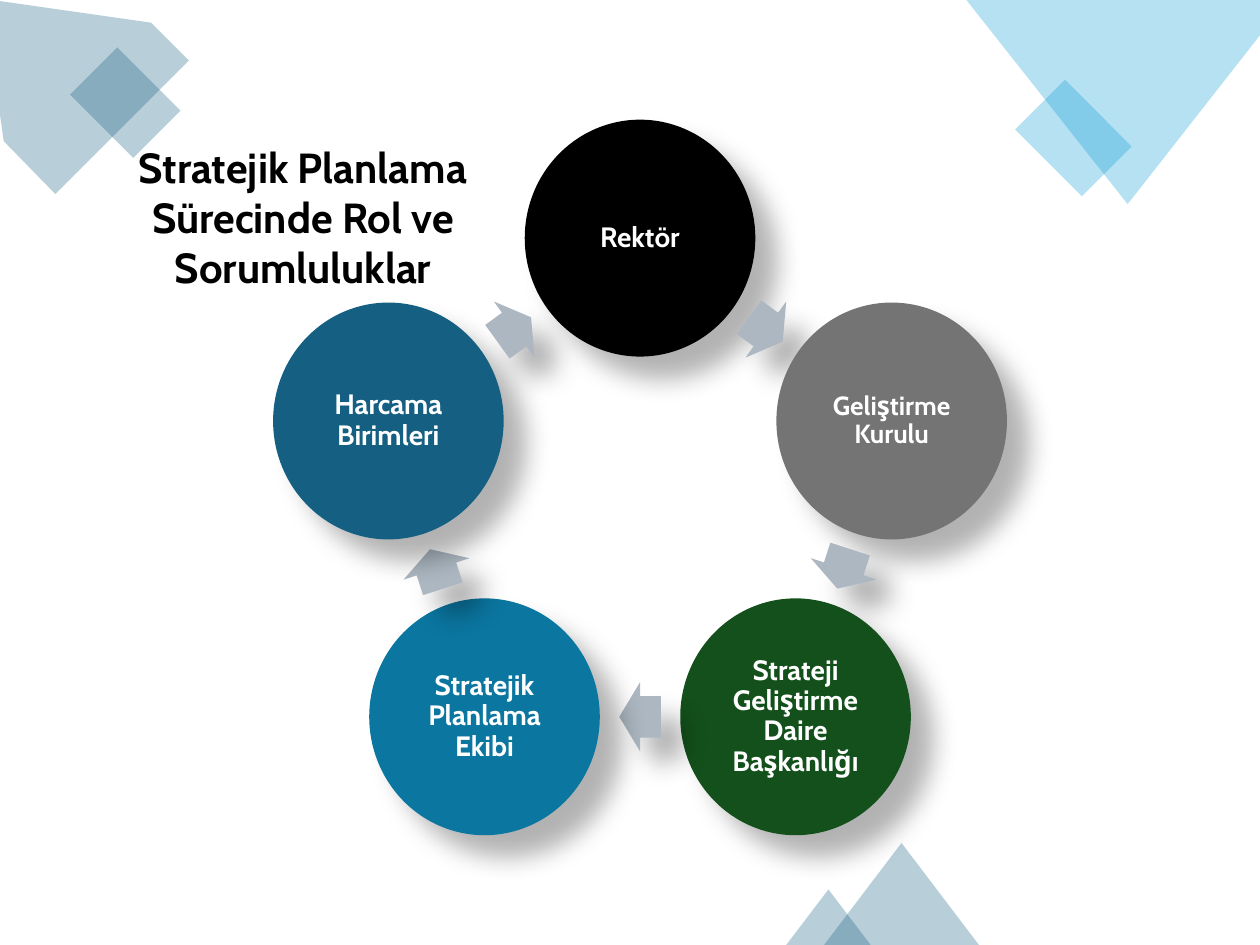
from math import cos, pi, radians, sin

from lxml.etree import SubElement
from pptx import Presentation
from pptx.dml.color import RGBColor
from pptx.enum.shapes import MSO_SHAPE
from pptx.enum.text import MSO_ANCHOR, MSO_AUTO_SIZE, PP_ALIGN
from pptx.oxml.ns import qn
from pptx.util import Inches, Pt

BLACK = RGBColor(0x00, 0x00, 0x00)
WHITE = RGBColor(0xFF, 0xFF, 0xFF)
GRAY = RGBColor(0x74, 0x74, 0x74)
GREEN = RGBColor(0x13, 0x50, 0x1B)
BLUE = RGBColor(0x0B, 0x76, 0xA0)
TEAL = RGBColor(0x15, 0x60, 0x82)
SKY = RGBColor(0x0F, 0x9E, 0xD5)
ARROW_GRAY = RGBColor(0xAC, 0xB7, 0xC1)

FONT = "Cabin"
TITLE = "Stratejik Planlama Sürecinde Rol ve Sorumluluklar"
ROLES = [
    ("Rektör", BLACK, 16),
    ("Geliştirme Kurulu", GRAY, 15),
    ("Strateji Geliştirme Daire Başkanlığı", GREEN, 16),
    ("Stratejik Planlama Ekibi", BLUE, 16),
    ("Harcama Birimleri", TEAL, 16),
]
CENTER_X, CENTER_Y, RADIUS = 5.08, 3.99, 2.1
CIRCLE_SIZE = (1.83, 1.88)
ARROW_SIZE = (0.33, 0.55)

POLYGONS = [
    ([(1.2, 0.18), (-0.13, -0.01), (0.03, 1.12), (0.44, 1.54), (1.5, 0.48)], TEAL),
    ([(10, 0), (7.67, 0), (8.95, 1.62), (10, 0.28)], SKY),
]
DECORATIONS = [
    (MSO_SHAPE.RECTANGLE, (0.73, 0.46, 0.53, 0.71), 315, TEAL),
    (MSO_SHAPE.RECTANGLE, (8.24, 0.72, 0.56, 0.75), 315, SKY),
    (MSO_SHAPE.ISOSCELES_TRIANGLE, (6.54, 6.69, 1.23, 0.81), 0, TEAL),
    (MSO_SHAPE.ISOSCELES_TRIANGLE, (6.24, 7.06, 0.67, 0.44), 0, TEAL),
]


def paint(shape, color):
    shape.shadow.inherit = False
    shape.fill.solid()
    shape.fill.fore_color.rgb = color
    shape.line.fill.background()


def set_alpha(color_element, percent):
    SubElement(color_element, qn("a:alpha"), val=str(percent * 1000))


def make_translucent(shape):
    fill = shape._element.spPr.find(qn("a:solidFill"))
    set_alpha(fill[0], 30)


def add_soft_shadow(shape):
    effects = shape._element.spPr.find(qn("a:effectLst"))
    outer = SubElement(
        effects, qn("a:outerShdw"), blurRad=str(Pt(15)), dist=str(Pt(18)),
        dir=str(45 * 60000), algn="ctr", rotWithShape="0",
    )
    set_alpha(SubElement(outer, qn("a:srgbClr"), val=str(BLACK)), 30)


def add_polygon(slide, points, color):
    start, *others = [(Inches(x), Inches(y)) for x, y in points]
    builder = slide.shapes.build_freeform(*start)
    builder.add_line_segments(others, close=True)
    polygon = builder.convert_to_shape()
    paint(polygon, color)
    make_translucent(polygon)


def add_decoration(slide, kind, box, rotation, color):
    decoration = slide.shapes.add_shape(kind, *map(Inches, box))
    decoration.rotation = rotation
    paint(decoration, color)
    make_translucent(decoration)


def write_text(frame, text, size, color):
    frame.word_wrap = True
    paragraph = frame.paragraphs[0]
    paragraph.alignment = PP_ALIGN.CENTER
    run = paragraph.add_run()
    run.text = text
    font_format = {"name": FONT, "size": Pt(size), "bold": True}
    for attribute, value in font_format.items():
        setattr(run.font, attribute, value)
    run.font.color.rgb = color
    return paragraph


def add_title(slide):
    title = slide.shapes.add_textbox(*map(Inches, (0.83, 1.07, 3.15, 1.31)))
    title.text_frame.auto_size = MSO_AUTO_SIZE.SHAPE_TO_FIT_TEXT
    write_text(title.text_frame, TITLE, 24, BLACK).space_after = Pt(6)


def add_on_ring(slide, kind, angle, radius, size, color):
    width, height = size
    left = CENTER_X + radius * sin(radians(angle)) - width / 2
    top = CENTER_Y - radius * cos(radians(angle)) - height / 2
    shape = slide.shapes.add_shape(kind, *map(Inches, (left, top, width, height)))
    paint(shape, color)
    add_soft_shadow(shape)
    return shape


def add_role(slide, angle, role, color, size):
    circle = add_on_ring(slide, MSO_SHAPE.OVAL, angle, RADIUS, CIRCLE_SIZE, color)
    frame = circle.text_frame
    frame_format = {
        "vertical_anchor": MSO_ANCHOR.MIDDLE,
        "margin_left": Inches(0.02),
        "margin_right": Inches(0.02),
        "margin_top": Inches(0.02),
        "margin_bottom": Inches(0.02),
    }
    for attribute, value in frame_format.items():
        setattr(frame, attribute, value)
    write_text(frame, role, size, WHITE).line_spacing = 0.9


def add_arrow(slide, angle):
    apothem = RADIUS * cos(pi / len(ROLES))
    arrow = add_on_ring(slide, MSO_SHAPE.RIGHT_ARROW, angle, apothem, ARROW_SIZE, ARROW_GRAY)
    arrow.rotation = angle
    arrow.adjustments[0] = 0.6
    arrow.adjustments[1] = 0.5


def main():
    presentation = Presentation()
    presentation.slide_width = Inches(10)
    presentation.slide_height = Inches(7.5)
    slide = presentation.slides.add_slide(presentation.slide_layouts[6])

    for points, color in POLYGONS:
        add_polygon(slide, points, color)
    for decoration in DECORATIONS:
        add_decoration(slide, *decoration)
    add_title(slide)

    step = 360 / len(ROLES)
    for index, role in enumerate(ROLES):
        add_role(slide, index * step, *role)
        add_arrow(slide, (index + 0.5) * step)

    presentation.save("out.pptx")


if __name__ == "__main__":
    main()
